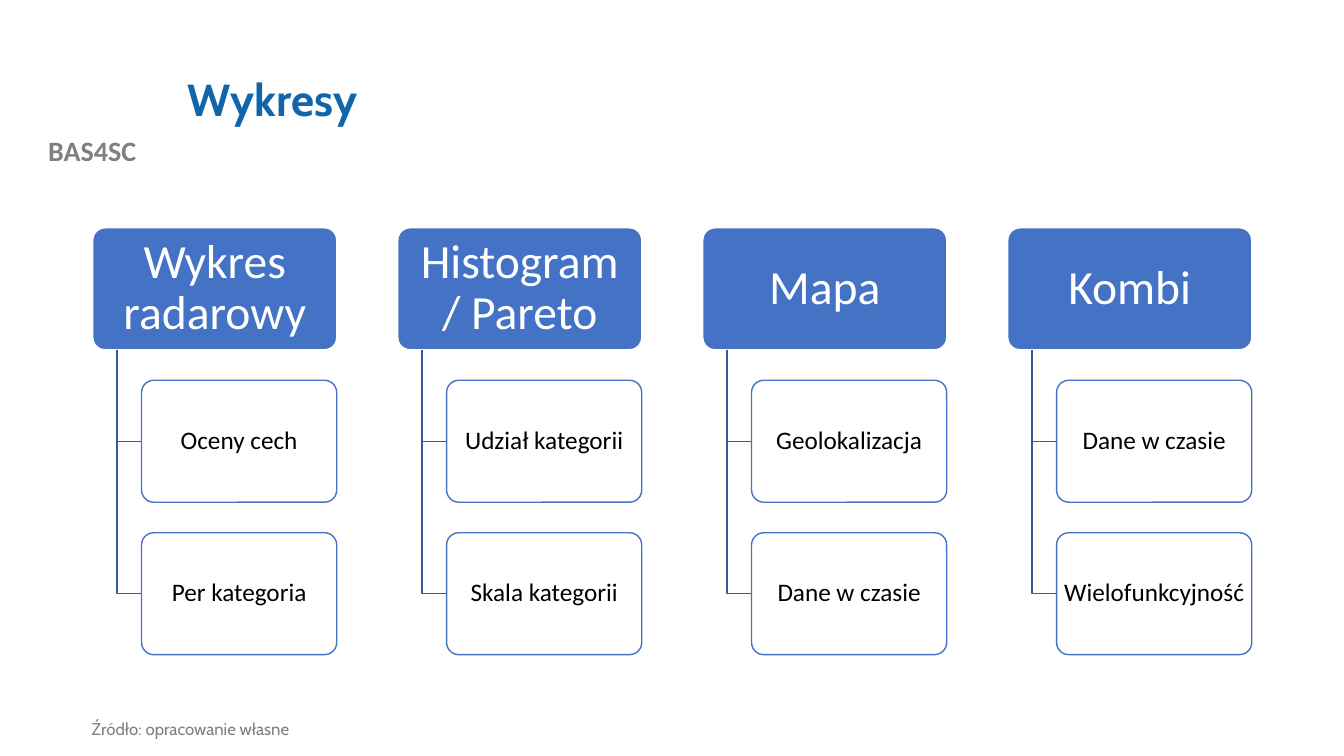
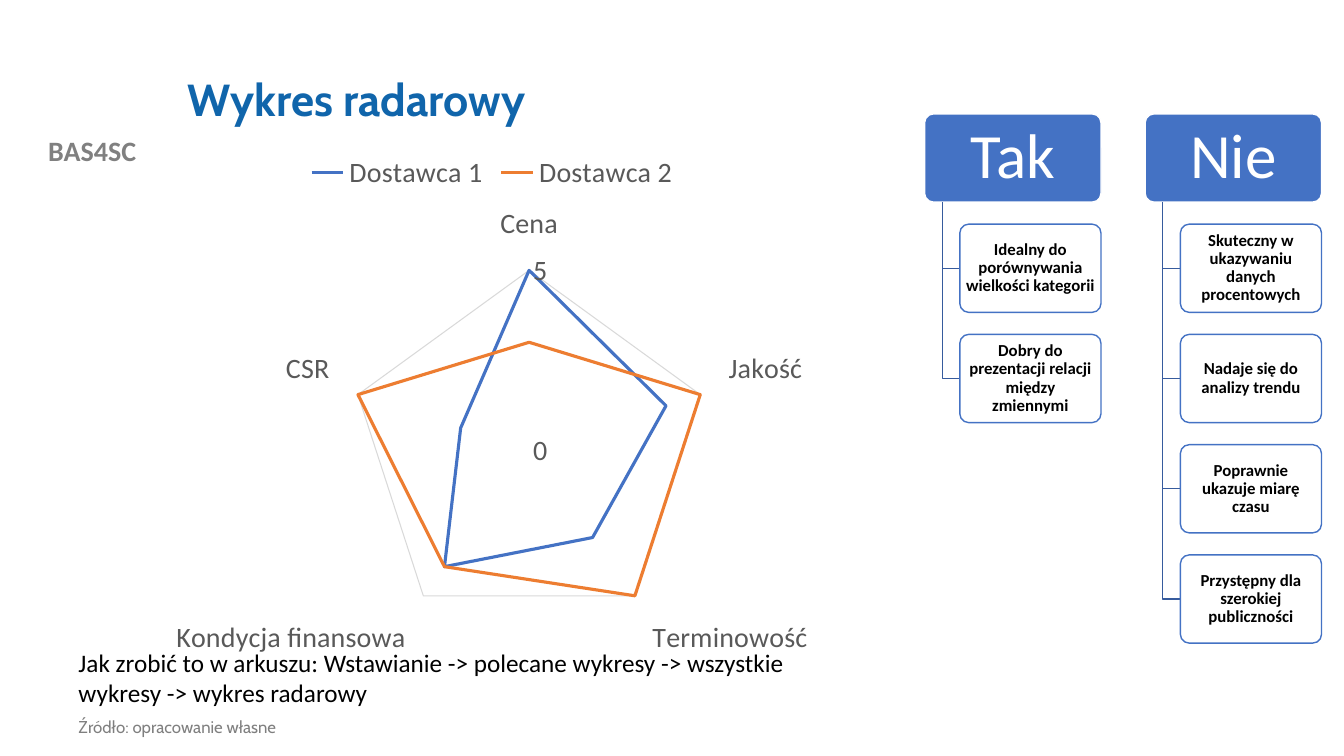
"""Builds two slides on chart types: an overview and the radar chart."""
from pptx import Presentation
from pptx.chart.data import CategoryChartData
from pptx.dml.color import RGBColor
from pptx.enum.chart import XL_CHART_TYPE as ChartType, XL_LEGEND_POSITION as LegendPos, XL_TICK_MARK as Tick
from pptx.enum.shapes import MSO_SHAPE as Shape
from pptx.enum.text import MSO_ANCHOR as Anchor, MSO_AUTO_SIZE as AutoSize, PP_ALIGN as Align
from pptx.util import Inches, Pt

WIDTH, HEIGHT = 13.33, 7.5
BLUE, ORANGE, TRUNK = "4472C4", "ED7D31", "365B9D"
TITLE, BRAND, SOURCE = "1065AB", "808080", "7F7F7F"
WHITE, BLACK, AXIS, GRID = "FFFFFF", "000000", "595959", "D9D9D9"
BODY_FONT, ACCENT_FONT = "Calibri", "Cabin"

PROJECT = "BAS4SC"
SOURCE_NOTE = "Źródło: opracowanie własne"
CHART_KINDS = [
    ("Wykres radarowy", ["Oceny cech", "Per kategoria"]),
    ("Histogram / Pareto", ["Udział kategorii", "Skala kategorii"]),
    ("Mapa", ["Geolokalizacja", "Dane w czasie"]),
    ("Kombi", ["Dane w czasie", "Wielofunkcyjność"]),
]
RADAR_USES = [
    ("Tak", ["Idealny do porównywania wielkości kategorii",
             "Dobry do prezentacji relacji między zmiennymi"]),
    ("Nie", ["Skuteczny w ukazywaniu danych procentowych",
             "Nadaje się do analizy trendu",
             "Poprawnie ukazuje miarę czasu",
             "Przystępny dla szerokiej publiczności"]),
]
CRITERIA = ["Cena", "Jakość", "Terminowość", "Kondycja finansowa", "CSR"]
SUPPLIERS = [("Dostawca 1", (5, 4, 3, 4, 2), BLUE), ("Dostawca 2", (3, 5, 5, 4, 5), ORANGE)]
HOW_TO = ("Jak zrobić to w arkuszu: Wstawianie -> polecane wykresy -> "
          "wszystkie wykresy -> wykres radarowy")


def rgb(code):
    return RGBColor.from_string(code)


def place(*lengths):
    return [Inches(length) for length in lengths]


def style(font, size, color, name=BODY_FONT, bold=False):
    font.size, font.name, font.bold = Pt(size), name, bold
    font.color.rgb = rgb(color)


def write(frame, text, size, color, name=BODY_FONT, bold=False,
          align=Align.LEFT, anchor=Anchor.TOP, spacing=0.9):
    frame.text = text
    frame.word_wrap = True
    frame.auto_size = AutoSize.NONE
    frame.vertical_anchor = anchor
    paragraph = frame.paragraphs[0]
    paragraph.alignment, paragraph.line_spacing = align, spacing
    style(paragraph.runs[0].font, size, color, name, bold)


def add_text(slide, box, text, size, color, **look):
    write(slide.shapes.add_textbox(*place(*box)).text_frame, text, size, color, **look)


def add_slide(deck, title):
    slide = deck.slides.add_slide(deck.slide_layouts[5])
    heading = slide.shapes.title
    heading.left, heading.top, heading.width, heading.height = place(1.76, 0.4, 10.66, 1.22)
    write(heading.text_frame, title, 32, TITLE, ACCENT_FONT, True, anchor=Anchor.MIDDLE)
    add_text(slide, (0, 1.28, 1.83, 0.44), PROJECT, 20, BRAND, bold=True,
             align=Align.CENTER, spacing=1)
    return slide


def add_source(slide, left, top):
    add_text(slide, (left, top, 5.01, 0.3), SOURCE_NOTE, 12, SOURCE, name=ACCENT_FONT)


def add_card(slide, box, text, size, fill, line, color, inset, bold=False):
    card = slide.shapes.add_shape(Shape.ROUNDED_RECTANGLE, *place(*box))
    card.adjustments[0] = 0.1
    card.shadow.inherit = False
    card.fill.solid()
    card.fill.fore_color.rgb = rgb(fill)
    card.line.color.rgb = rgb(line)
    card.line.width = Pt(1)
    frame = card.text_frame
    frame.margin_left = frame.margin_right = Inches(inset)
    frame.margin_top = frame.margin_bottom = Inches(inset * 0.67)
    write(frame, text, size, color, bold=bold, align=Align.CENTER, anchor=Anchor.MIDDLE)


def add_branch(slide, x, top, end_x, end_y):
    outline = slide.shapes.build_freeform(*place(x, top), scale=1.0)
    outline.add_line_segments([place(x, end_y), place(end_x, end_y)], close=False)
    branch = outline.convert_to_shape()
    branch.shadow.inherit = False
    branch.fill.background()
    branch.line.color.rgb = rgb(TRUNK)
    branch.line.width = Pt(1)


def add_hierarchy(slide, groups, left, top, width, head_size, head_inset, item_size, bold=False):
    height = width / 2
    for column, (head, items) in enumerate(groups):
        x = left + column * width * 1.25
        add_card(slide, (x, top, width, height), head, head_size, BLUE, WHITE, WHITE, head_inset)
        item_x = x + width * 0.2
        for row, item in enumerate(items, 1):
            y = top + row * height * 1.25
            add_branch(slide, x + width * 0.1, top + height, item_x, y + height / 2)
            add_card(slide, (item_x, y, width * 0.8, height), item, item_size,
                     WHITE, BLUE, BLACK, 0.03, bold)


def add_radar(slide, box):
    data = CategoryChartData()
    data.categories = CRITERIA
    for name, values, _ in SUPPLIERS:
        data.add_series(name, values)
    chart = slide.shapes.add_chart(ChartType.RADAR, *place(*box), data).chart
    style(chart.font, 20, AXIS)
    chart.has_title = False
    chart.has_legend = True
    chart.legend.position = LegendPos.TOP
    chart.legend.include_in_layout = False
    style(chart.legend.font, 20, AXIS)
    plot = chart.plots[0]
    plot.vary_by_categories = False
    for series, (_, _, color) in zip(plot.series, SUPPLIERS):
        series.format.line.color.rgb = rgb(color)
        series.format.line.width = Pt(2.25)
    scale = chart.value_axis
    scale.minimum_scale, scale.maximum_scale, scale.major_unit = 0, 5, 5
    scale.format.line.fill.background()
    for axis in (chart.category_axis, scale):
        axis.major_tick_mark = axis.minor_tick_mark = Tick.NONE
        style(axis.tick_labels.font, 20, AXIS)
    for line in (scale.major_gridlines.format.line, chart.category_axis.format.line):
        line.color.rgb = rgb(GRID)
        line.width = Pt(0.75)


def main():
    deck = Presentation()
    deck.slide_width, deck.slide_height = place(WIDTH, HEIGHT)

    overview = add_slide(deck, "Wykresy")
    add_hierarchy(overview, CHART_KINDS, 0.92, 2.26, 2.42, 34, 0.07, 18)
    add_source(overview, 0.81, 7.1)

    radar = add_slide(deck, "Wykres radarowy")
    add_source(radar, 0.68, 7.08)
    add_radar(radar, (0.46, 1.41, 8.84, 5.19))
    add_hierarchy(radar, RADAR_USES, 9.17, 1.13, 1.75, 45, 0.09, 12, bold=True)
    add_text(radar, (0.68, 6.37, 7.88, 0.71), HOW_TO, 18, BLACK, spacing=1)

    deck.save("out.pptx")


if __name__ == "__main__":
    main()
